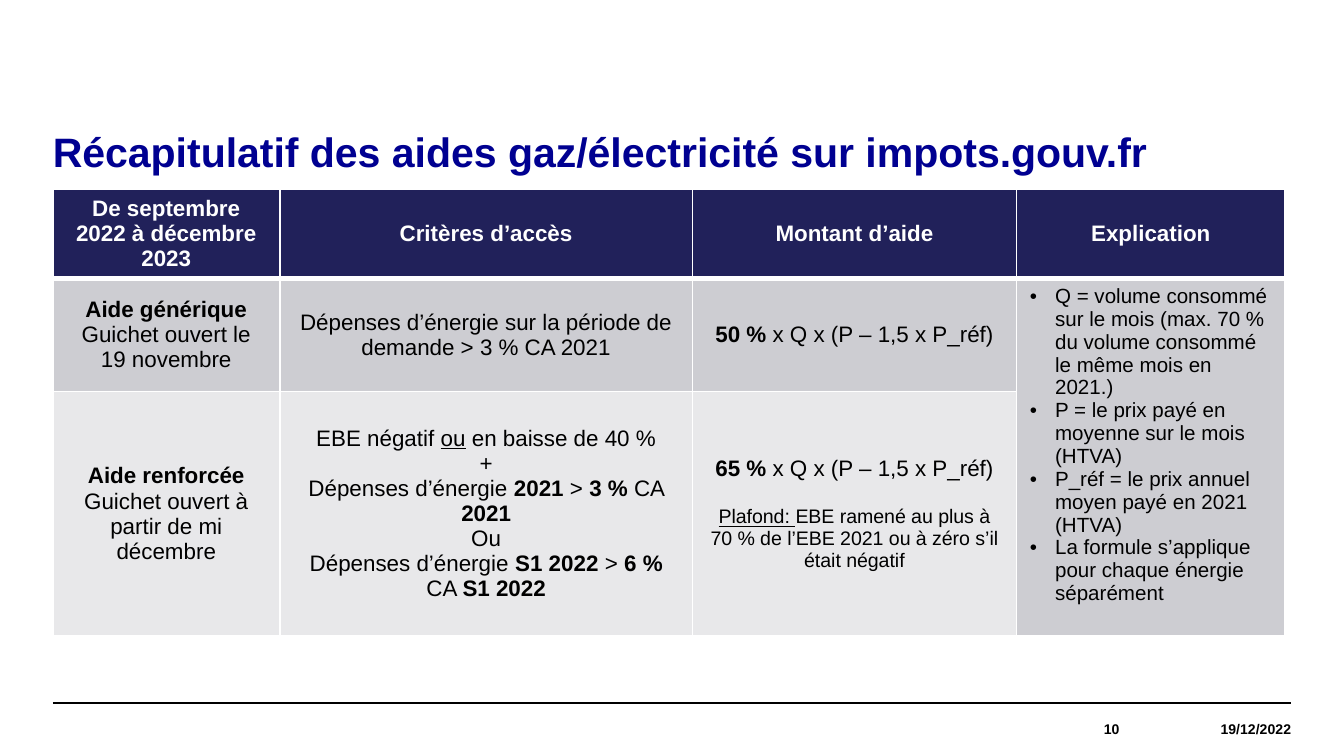
from dataclasses import dataclass

from lxml.etree import SubElement
from pptx import Presentation
from pptx.dml.color import RGBColor
from pptx.enum.shapes import MSO_CONNECTOR
from pptx.enum.text import MSO_ANCHOR, PP_ALIGN
from pptx.oxml.ns import qn
from pptx.util import Pt


@dataclass(frozen=True)
class Theme:
    font: str = "Arial"
    title_color: str = "000091"
    header_fill: str = "21215A"
    dark_row: str = "CDCDD2"
    light_row: str = "E8E8EA"
    black: str = "000000"
    white: str = "FFFFFF"
    title_size: float = 22
    table_size: float = 12
    bullet_size: float = 11
    note_size: float = 10.5
    footer_size: float = 7.5


LEFT, RIGHT = 28.3, 691.7
FOOTER_TOP = 376.6
COLUMN_WIDTHS = [121.6, 221.2, 173.5, 144]
ROW_HEIGHTS = [47.5, 60.7, 131]

# A paragraph is a list of (text, style) runs; style holds "b" for bold, "u" for underlined.
HEADERS = ["De septembre 2022 à décembre 2023", "Critères d’accès", "Montant d’aide", "Explication"]
FORMULA = (" x Q x (P – 1,5 x P_réf)", "")
BODY = [
    [
        [[("Aide générique", "b")], [("Guichet ouvert le 19 novembre", "")]],
        [[("Dépenses d’énergie sur la période de demande > 3 % CA 2021", "")]],
        [[("50 %", "b"), FORMULA]],
    ],
    [
        [[("Aide renforcée", "b")], [("Guichet ouvert à partir de mi décembre", "")]],
        [
            [("EBE négatif ", ""), ("ou", "u"), (" en baisse de 40 %", "")],
            [("+", "")],
            [("Dépenses d’énergie ", ""), ("2021", "b"), (" > ", ""), ("3 %", "b"),
             (" CA ", ""), ("2021", "b")],
            [("Ou", "")],
            [("Dépenses d’énergie ", ""), ("S1 2022 ", "b"), ("> ", ""), ("6 %", "b"),
             (" CA ", ""), ("S1 2022", "b")],
        ],
        [[("65 %", "b"), FORMULA]],
    ],
]
CEILING = [("Plafond: ", "u"),
           ("EBE ramené au plus à 70 % de l’EBE 2021 ou à zéro s’il était négatif", "")]
EXPLANATIONS = [
    "Q = volume consommé sur le mois (max. 70 % du volume consommé le même mois en 2021.)",
    "P = le prix payé en moyenne sur le mois (HTVA)",
    "P_réf = le prix annuel moyen payé en 2021 (HTVA)",
    "La formule s’applique pour chaque énergie séparément",
]


class SlideBuilder:
    """Draws elements on one slide in the given theme; lengths are in points."""

    def __init__(self, slide, theme):
        self.slide = slide
        self.theme = theme

    def add_runs(self, paragraph, runs, size, color, alignment=PP_ALIGN.CENTER):
        paragraph.alignment = alignment
        for text, style in runs:
            run = paragraph.add_run()
            run.text = text
            run.font.name = self.theme.font
            run.font.size = Pt(size)
            run.font.bold = "b" in style
            run.font.underline = "u" in style
            run.font.color.rgb = RGBColor.from_string(color)

    def clear_margins(self, frame, anchor):
        frame.margin_left = frame.margin_right = frame.margin_top = frame.margin_bottom = 0
        frame.word_wrap = True
        frame.vertical_anchor = anchor

    def title(self, text, left, top, width, height):
        shape = self.slide.shapes.title
        shape.left, shape.top, shape.width, shape.height = map(Pt, (left, top, width, height))
        self.clear_margins(shape.text_frame, MSO_ANCHOR.TOP)
        paragraph = shape.text_frame.paragraphs[0]
        paragraph.line_spacing = 0.9
        self.add_runs(paragraph, [(text, "b")], self.theme.title_size,
                      self.theme.title_color, PP_ALIGN.LEFT)

    def rule(self, left, right, y):
        line = self.slide.shapes.add_connector(
            MSO_CONNECTOR.STRAIGHT, Pt(left), Pt(y), Pt(right), Pt(y))
        line.line.color.rgb = RGBColor.from_string(self.theme.black)
        line.line.width = Pt(0.8)
        SubElement(line._element.spPr, qn("a:effectLst"))

    def footer(self, text, right, width):
        box = self.slide.shapes.add_textbox(Pt(right - width), Pt(FOOTER_TOP), Pt(width), Pt(28))
        self.clear_margins(box.text_frame, MSO_ANCHOR.MIDDLE)
        self.add_runs(box.text_frame.paragraphs[0], [(text, "b")], self.theme.footer_size,
                      self.theme.black, PP_ALIGN.RIGHT)

    def table(self, left, top, widths, heights):
        frame = self.slide.shapes.add_table(len(heights), len(widths), Pt(left), Pt(top),
                                            Pt(sum(widths)), Pt(sum(heights)))
        table = frame.table
        table.horz_banding = False
        for column, width in zip(table.columns, widths):
            column.width = Pt(width)
        for row, height in zip(table.rows, heights):
            row.height = Pt(height)
        return table

    def cell_style(self, cell, fill, top_border=1, bottom_border=1):
        cell.vertical_anchor = MSO_ANCHOR.MIDDLE
        properties = cell._tc.get_or_add_tcPr()
        borders = {"a:lnL": 1, "a:lnR": 1, "a:lnT": top_border, "a:lnB": bottom_border}
        for tag, width in borders.items():
            border = SubElement(properties, qn(tag), w=str(Pt(width)))
            line_fill = SubElement(border, qn("a:solidFill"))
            SubElement(line_fill, qn("a:srgbClr"), val=self.theme.white)
        cell.fill.solid()
        cell.fill.fore_color.rgb = RGBColor.from_string(fill)

    def next_paragraph(self, cell):
        """Return the cell's first paragraph while it is empty, else a new one."""
        first = cell.text_frame.paragraphs[0]
        return cell.text_frame.add_paragraph() if first.runs else first

    def cell_text(self, cell, runs, size, color, space_before=None):
        paragraph = self.next_paragraph(cell)
        if space_before:
            paragraph.space_before = Pt(space_before)
        self.add_runs(paragraph, runs, size, color)

    def cell_bullet(self, cell, text):
        paragraph = self.next_paragraph(cell)
        properties = paragraph._p.get_or_add_pPr()
        properties.set("marL", str(Pt(13.5)))
        properties.set("indent", str(-Pt(13.5)))
        SubElement(properties, qn("a:buFont"), typeface=self.theme.font)
        SubElement(properties, qn("a:buChar"), char="•")
        self.add_runs(paragraph, [(text, "")], self.theme.bullet_size,
                      self.theme.black, PP_ALIGN.LEFT)


def fill_table(builder, table):
    theme = builder.theme
    for column, text in enumerate(HEADERS):
        cell = table.cell(0, column)
        builder.cell_style(cell, theme.header_fill, bottom_border=3)
        builder.cell_text(cell, [(text, "b")], theme.table_size, theme.white)

    fills = [theme.dark_row, theme.light_row]
    for row, (contents, fill) in enumerate(zip(BODY, fills), start=1):
        for column, paragraphs in enumerate(contents):
            cell = table.cell(row, column)
            builder.cell_style(cell, fill, top_border=3 if row == 1 else 1)
            for runs in paragraphs:
                builder.cell_text(cell, runs, theme.table_size, theme.black)
    builder.cell_text(table.cell(2, 2), CEILING, theme.note_size, theme.black, space_before=13.4)

    explanation = table.cell(1, 3)
    explanation.merge(table.cell(2, 3))
    builder.cell_style(explanation, theme.dark_row, top_border=3)
    builder.cell_style(table.cell(2, 3), theme.dark_row)
    explanation.vertical_anchor = MSO_ANCHOR.TOP
    for text in EXPLANATIONS:
        builder.cell_bullet(explanation, text)


def main():
    presentation = Presentation()
    presentation.slide_width, presentation.slide_height = Pt(720), Pt(405)
    slide = presentation.slides.add_slide(presentation.slide_layouts[5])
    builder = SlideBuilder(slide, Theme())

    builder.rule(LEFT, RIGHT, FOOTER_TOP)
    builder.title("Récapitulatif des aides gaz/électricité sur impots.gouv.fr",
                  LEFT, 70.6, RIGHT - LEFT, 57)
    fill_table(builder, builder.table(LEFT, 101.5, COLUMN_WIDTHS, ROW_HEIGHTS))
    builder.footer("19/12/2022", RIGHT, 92)
    builder.footer("10", RIGHT - 92, 106.5)
    presentation.save("out.pptx")


if __name__ == "__main__":
    main()
